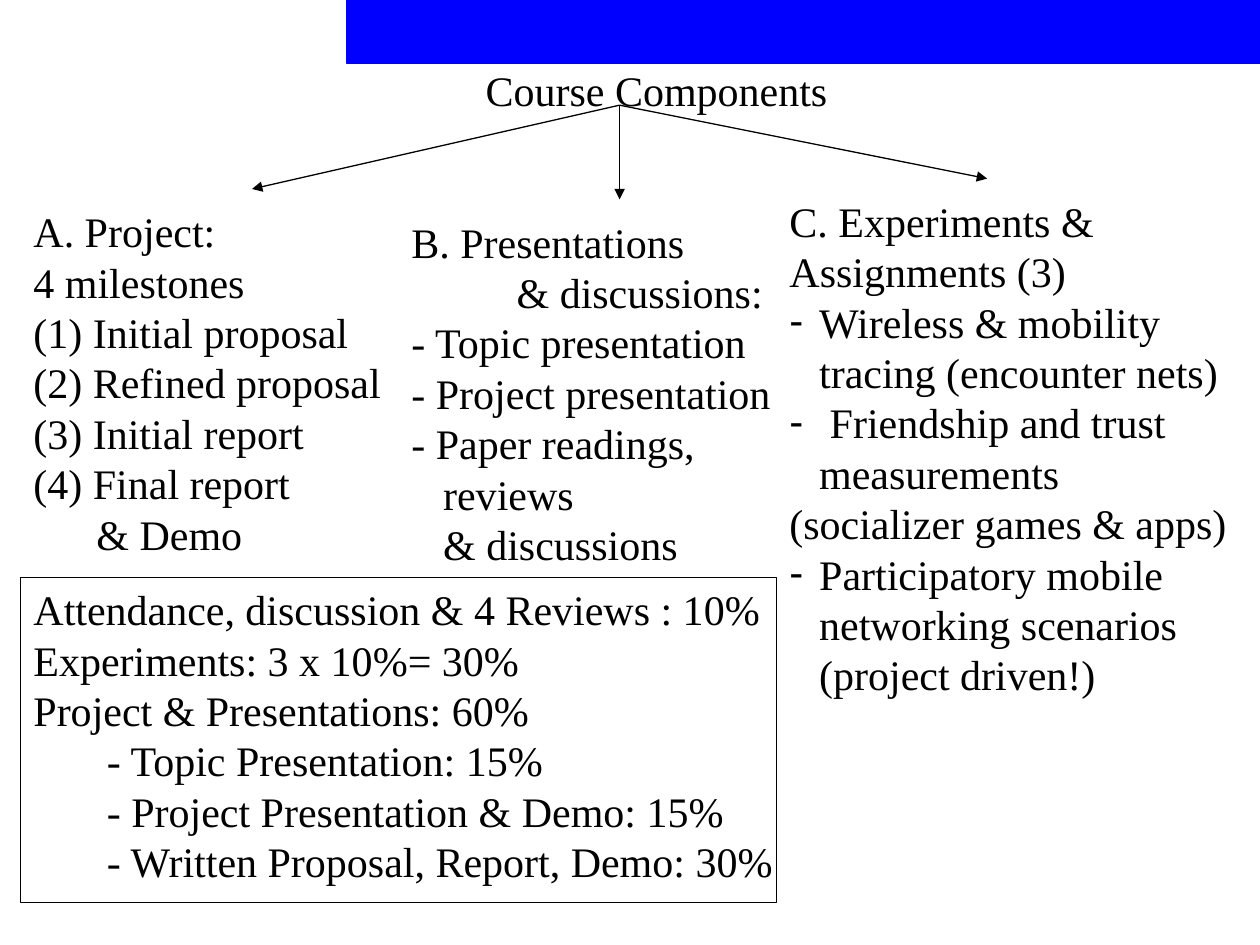
from lxml.etree import SubElement as Sub
from pptx import Presentation
from pptx.dml.color import RGBColor as RGB
from pptx.enum.shapes import MSO_CONNECTOR as Link, MSO_SHAPE as Kind
from pptx.enum.text import MSO_ANCHOR as Anchor, MSO_AUTO_SIZE as Fit, PP_ALIGN as Align
from pptx.oxml.ns import qn
from pptx.util import Cm, Pt


def hue(code):
    return RGB.from_string(code)


def write(box, at, lines, wrap=True, side=Align.LEFT, anchor=Anchor.TOP):
    box.left, box.top, box.width, box.height = map(Cm, at)
    frame = box.text_frame
    look = {"word_wrap": wrap, "auto_size": Fit.NONE, "vertical_anchor": anchor}
    for key, val in look.items():
        setattr(frame, key, val)
    for num, (text, left, mark) in enumerate(lines):
        para = frame.add_paragraph() if num else frame.paragraphs[0]
        props = para._p.get_or_add_pPr()
        props.set("marL", str(Cm(left)))
        props.set("indent", str(-Cm(left) if mark else 0))
        if mark:
            Sub(props, qn("a:buFontTx"))
            Sub(props, qn("a:buChar"), char=mark)
        else:
            Sub(props, qn("a:buNone"))
        form = {"alignment": side, "line_spacing": Pt(28.8), "space_before": Pt(0)}
        for key, val in form.items():
            setattr(para, key, val)
        run = para.add_run()
        run.text = text
        for key, val in {"name": "Times New Roman", "size": Pt(24), "bold": False}.items():
            setattr(run.font, key, val)
        run.font.color.rgb = hue("000000")


deck = Presentation()
deck.slide_width, deck.slide_height = Cm(25.4), Cm(19.05)
slide = deck.slides.add_slide(deck.slide_layouts.get_by_name("Comparison"))
shapes = slide.shapes
head, work, talks, tests, marks = slide.placeholders

boxes = [
    ((6.99, 0, 18.41, 1.27), "0000FF", "0000FF"),
    ((0.42, 11.64, 15.24, 6.56), None, "000000"),
]
for at, fill, line in boxes:
    rect = shapes.add_shape(Kind.RECTANGLE, *map(Cm, at))
    rect.shadow.inherit = False
    if fill:
        rect.fill.solid()
        rect.fill.fore_color.rgb = hue(fill)
    else:
        rect.fill.background()
    rect.line.color.rgb = hue(line)
    rect.line.width = Pt(0.75)

for x, y in [(5.08, 3.81), (12.49, 4.02), (19.9, 3.6)]:
    arrow = shapes.add_connector(Link.STRAIGHT, Cm(12.49), Cm(2.12), Cm(x), Cm(y))
    arrow.line.color.rgb = hue("000000")
    arrow.line.width = Pt(0.75)
    Sub(arrow.line._get_or_add_ln(), qn("a:tailEnd"), type="triangle")
    Sub(arrow._element.spPr, qn("a:effectLst"))

write(head, (5.72, 1.06, 15.03, 1.48), [("Course Components", 0, None)],
      side=Align.CENTER, anchor=Anchor.MIDDLE)

write(work, (0.42, 4.02, 7.52, 7.37), [
    ("A. Project:", 0, None),
    ("4 milestones", 0, None),
    ("(1) Initial proposal", 0, None),
    ("(2) Refined proposal", 0, None),
    ("(3) Initial report", 0, None),
    ("(4) Final report", 0, None),
    ("& Demo", 1.27, None),
], wrap=False)

write(talks, (8.04, 4.23, 7.75, 7.37), [
    ("B. Presentations", 0, None),
    ("& discussions:", 2.12, None),
    ("- Topic presentation", 0, None),
    ("- Project presentation", 0, None),
    ("- Paper readings,", 0, None),
    ("reviews", 0.64, None),
    ("& discussions", 0.64, None),
], wrap=False)

write(tests, (15.66, 3.81, 9.73, 10.52), [
    ("C. Experiments &", 0, None),
    ("Assignments (3)", 0, None),
    ("Wireless & mobility tracing (encounter nets)", 0.6, "-"),
    (" Friendship and trust measurements", 0.6, "-"),
    ("(socializer games & apps)", 0, None),
    ("Participatory mobile networking scenarios (project driven!)", 0.6, "-"),
])

write(marks, (0.42, 11.64, 15.57, 6.4), [
    ("Attendance, discussion & 4 Reviews : 10%", 0, None),
    ("Experiments: 3 x 10%= 30%", 0, None),
    ("Project & Presentations: 60%", 0, None),
    ("- Topic Presentation: 15%", 1.48, None),
    ("- Project Presentation & Demo: 15%", 1.48, None),
    ("- Written Proposal, Report, Demo: 30%", 1.48, None),
])

deck.save("out.pptx")
